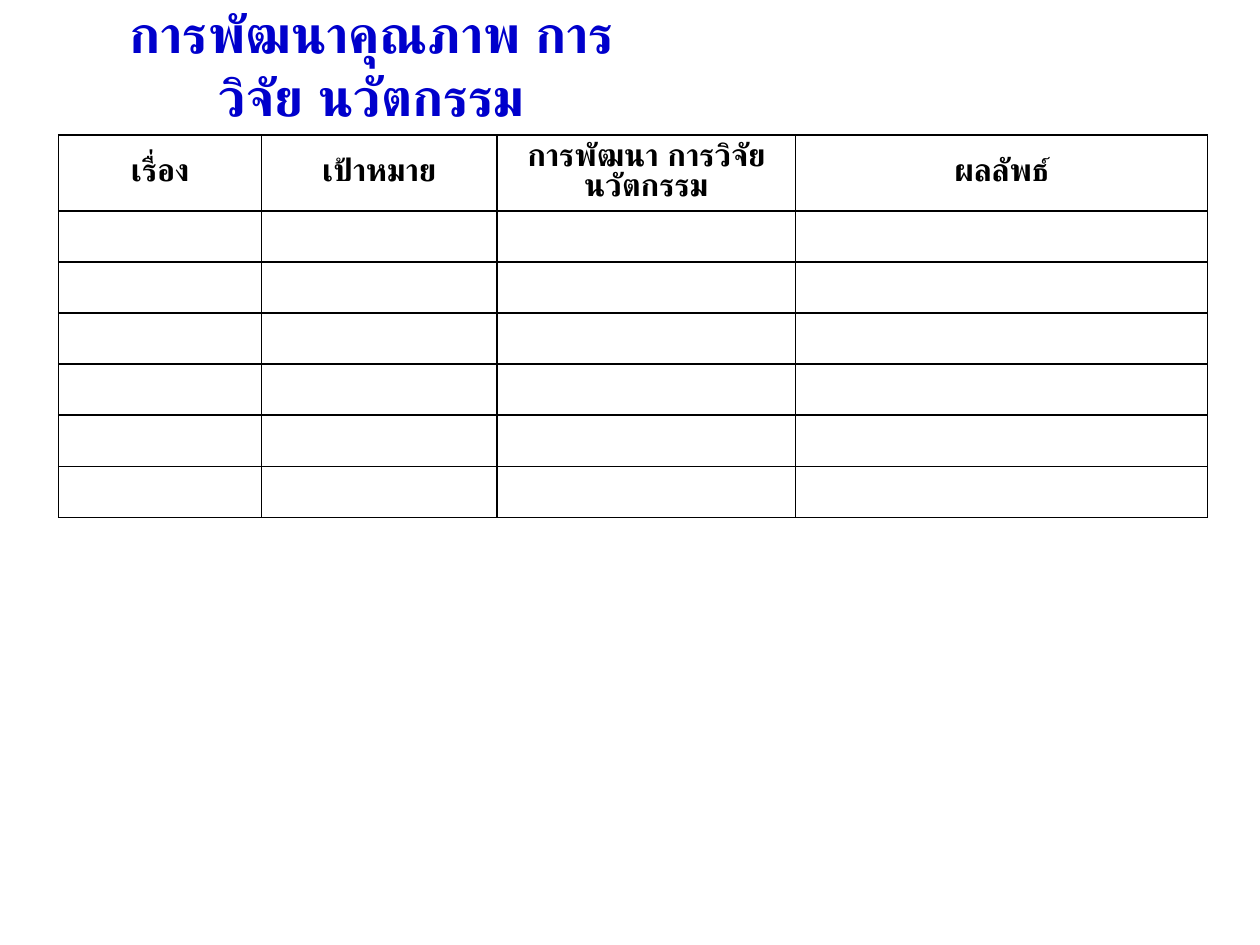
from dataclasses import dataclass

from lxml import etree
from pptx import Presentation
from pptx import util as u
from pptx.dml.color import RGBColor
from pptx.enum import text
from pptx.oxml import ns

BLUE = RGBColor(0x00, 0x00, 0xCC)
BLACK = RGBColor(0x00, 0x00, 0x00)
FONT = "Arial"
BODY_ROWS = 6
HEADER_HEIGHT = u.Cm(1.53)
ROW_HEIGHT = u.Cm(1.03)


@dataclass
class Column:
    heading: str
    width: u.Length


COLUMNS = [
    Column("เรื่อง", u.Cm(4.09)),
    Column("เป้าหมาย", u.Cm(4.75)),
    Column("การพัฒนา การวิจัย นวัตกรรม", u.Cm(6.02)),
    Column("ผลลัพธ์", u.Cm(8.3)),
]


def format_paragraph(paragraph, size: int, color: RGBColor) -> None:
    paragraph.alignment = text.PP_ALIGN.CENTER
    for run in paragraph.runs:
        run.font.name = FONT
        run.font.size = u.Pt(size)
        run.font.bold = True
        run.font.color.rgb = color
        complex_font = etree.SubElement(run._r.get_or_add_rPr(), ns.qn("a:cs"))
        complex_font.set("typeface", FONT)


def add_title(slide, wording: str) -> None:
    title = slide.shapes.title
    title.left, title.top = u.Cm(1.73), u.Cm(0.56)
    title.width, title.height = u.Cm(11.53), u.Cm(1.47)
    frame = title.text_frame
    frame.text = wording
    frame.word_wrap = True
    frame.auto_size = text.MSO_AUTO_SIZE.NONE
    frame.vertical_anchor = text.MSO_ANCHOR.MIDDLE
    frame.margin_left = frame.margin_right = u.Cm(0.18)
    frame.margin_top = frame.margin_bottom = u.Cm(0.1)
    format_paragraph(frame.paragraphs[0], 30, BLUE)


def add_borders(cell) -> None:
    properties = cell._tc.get_or_add_tcPr()
    for position, side in enumerate(("lnL", "lnR", "lnT", "lnB")):
        line = etree.Element(ns.qn(f"a:{side}"), w=str(u.Pt(1)))
        fill = etree.SubElement(line, ns.qn("a:solidFill"))
        etree.SubElement(fill, ns.qn("a:srgbClr"), val=str(BLACK))
        properties.insert(position, line)


def add_development_table(slide) -> None:
    width = sum(column.width for column in COLUMNS)
    height = HEADER_HEIGHT + BODY_ROWS * ROW_HEIGHT
    table = slide.shapes.add_table(
        BODY_ROWS + 1, len(COLUMNS), u.Cm(1.18), u.Cm(2.72), width, height
    ).table
    table.first_row = table.horz_banding = False
    for row in table.rows:
        row.height = ROW_HEIGHT
    table.rows[0].height = HEADER_HEIGHT
    for cell in table.iter_cells():
        cell.fill.background()
        add_borders(cell)
    for index, column in enumerate(COLUMNS):
        table.columns[index].width = column.width
        cell = table.cell(0, index)
        cell.text_frame.text = column.heading
        cell.vertical_anchor = text.MSO_ANCHOR.MIDDLE
        cell.margin_left = cell.margin_right = u.Cm(0.15)
        cell.margin_top = cell.margin_bottom = 0
        paragraph = cell.text_frame.paragraphs[0]
        paragraph.line_spacing = 0.85
        format_paragraph(paragraph, 18, BLACK)


def main() -> None:
    presentation = Presentation()
    presentation.slide_width, presentation.slide_height = u.Cm(25.4), u.Cm(19.05)
    slide = presentation.slides.add_slide(presentation.slide_layouts[5])
    add_title(slide, "การพัฒนาคุณภาพ การวิจัย นวัตกรรม")
    add_development_table(slide)
    presentation.save("out.pptx")


if __name__ == "__main__":
    main()
